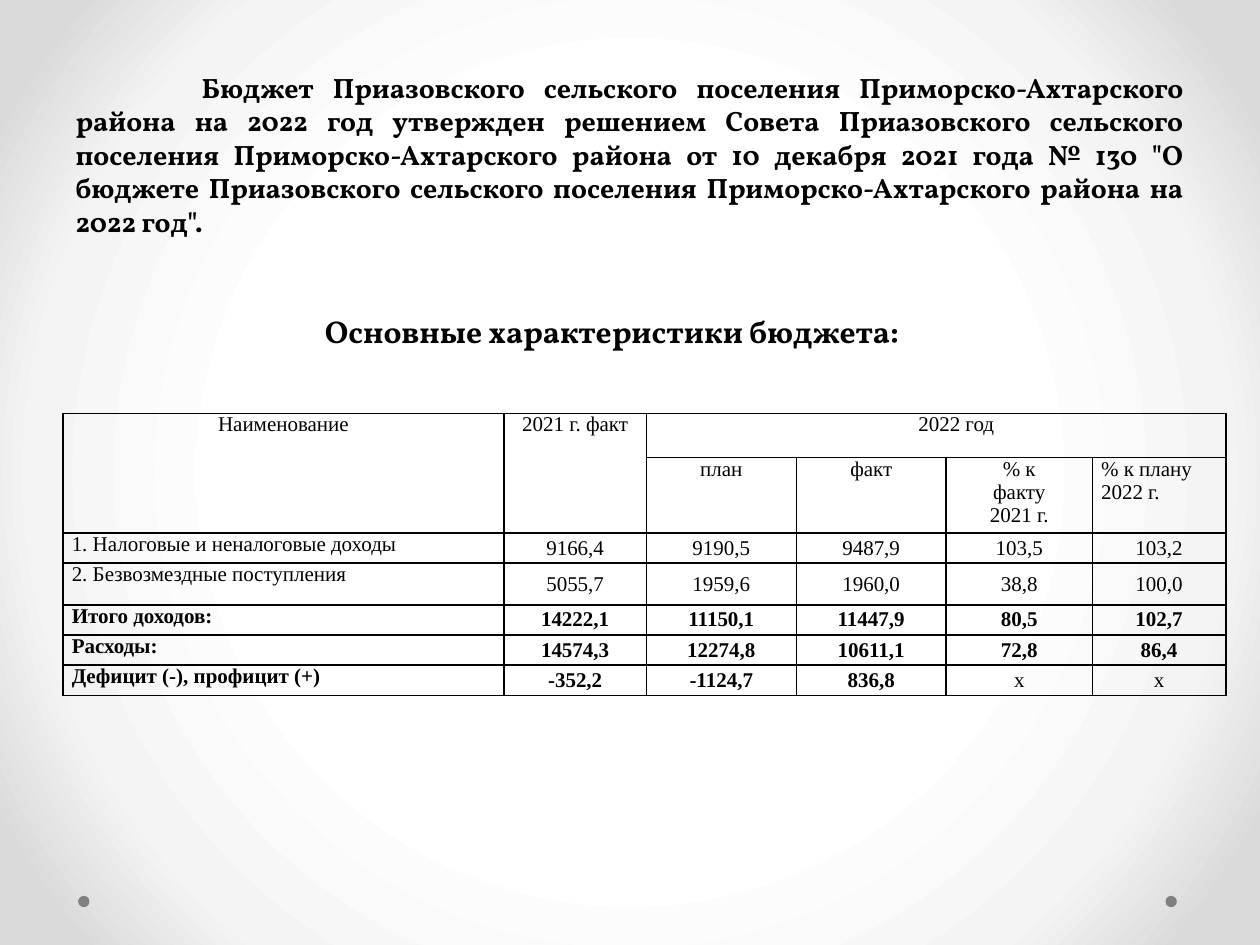
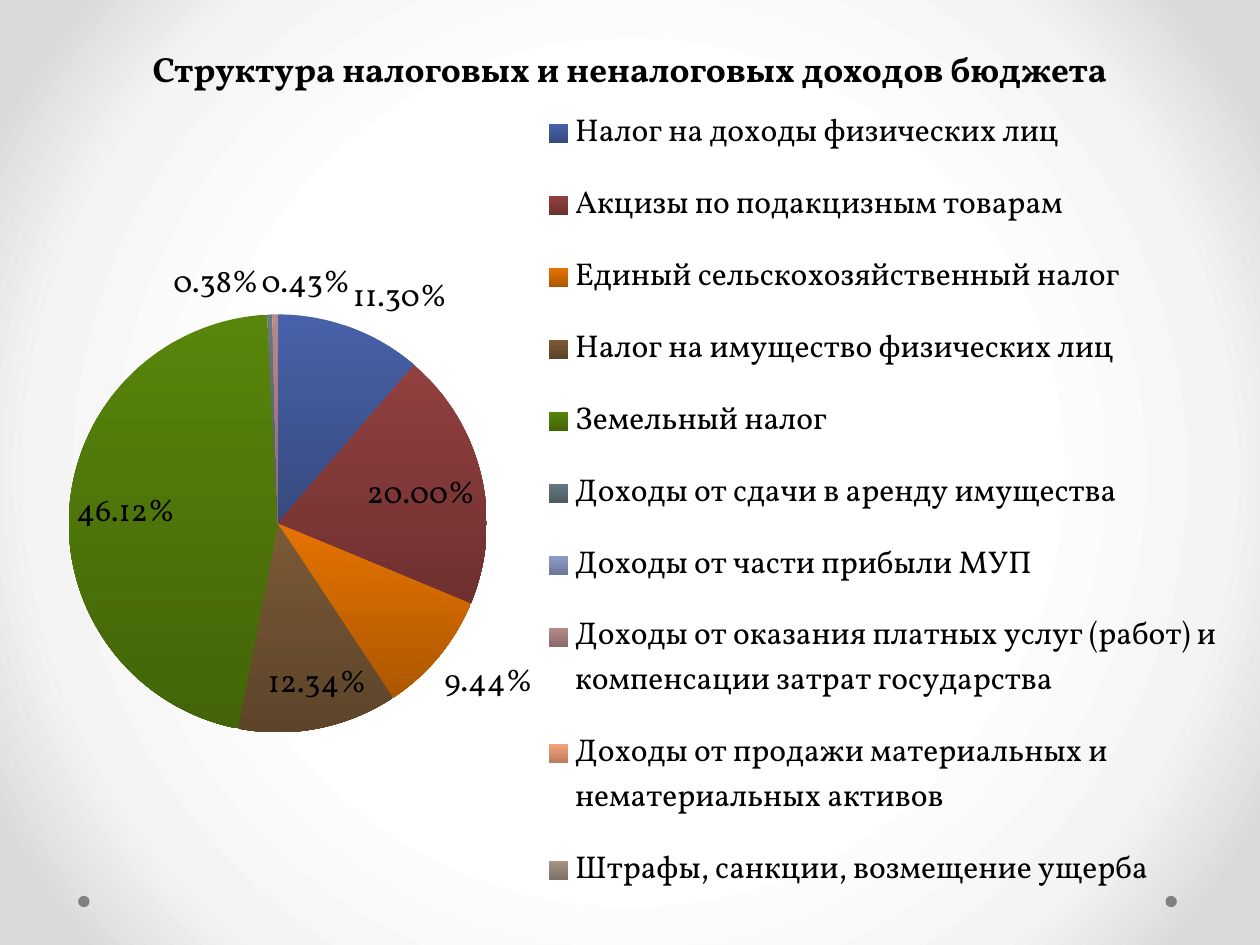
"""Build two slides on a rural settlement budget: key figures and revenue structure."""
from dataclasses import dataclass
from typing import NamedTuple

from lxml import etree
from pptx import Presentation
from pptx import util as u
from pptx.chart.data import CategoryChartData
from pptx.dml.color import RGBColor
from pptx.enum import chart as charts, shapes, text
from pptx.oxml import parse_xml
from pptx.oxml.ns import nsdecls, qn

Inches = u.Inches
Align = text.PP_ALIGN
Anchor = text.MSO_ANCHOR


@dataclass(frozen=True)
class Theme:
    ink: str = "000000"
    dot: str = "808080"
    glow: tuple = ((50, "FFFFFF"), (76, "F4F4F4"), (92, "DADADA"))
    display: str = "Vollkorn"
    serif: str = "Times New Roman"
    intro: int = 16
    title: int = 20
    heading: int = 18
    cell: int = 12
    border: float = 1
    slice_shade: float = 0.76


class Box(NamedTuple):
    left: float
    top: float
    width: float
    height: float

    def lengths(self) -> list:
        return [Inches(side) for side in self]


@dataclass(frozen=True)
class Income:
    name: str
    share: float
    color: str


@dataclass(frozen=True)
class BudgetRow:
    name: str
    figures: tuple
    bold: bool = False


THEME = Theme()
DOTS = [Box(left, 7.11, 0.09, 0.09) for left in (0.62, 9.25)]

COLUMNS = (3.5, 1.13, 1.19, 1.19, 1.16, 1.06)
ROWS = (0.35, 0.6, 0.24, 0.33, 0.24, 0.24, 0.24)
SUBHEADS = ("план", "факт", "% к\nфакту\n2021 г.", "% к плану\n2022 г.")
BUDGET = [
    BudgetRow("1. Налоговые и неналоговые доходы", ("9166,4", "9190,5", "9487,9", "103,5", "103,2")),
    BudgetRow("2. Безвозмездные поступления", ("5055,7", "1959,6", "1960,0", "38,8", "100,0")),
    BudgetRow("Итого доходов:", ("14222,1", "11150,1", "11447,9", "80,5", "102,7"), True),
    BudgetRow("Расходы:", ("14574,3", "12274,8", "10611,1", "72,8", "86,4"), True),
    BudgetRow("Дефицит (-), профицит (+)", ("-352,2", "-1124,7", "836,8", "х", "х"), True),
]
PERCENT = "0.00%"
INCOMES = [
    Income("Налог на доходы физических лиц", 11.3, "4861A9"),
    Income("Акцизы по подакцизным товарам", 20, "923F3F"),
    Income("Единый сельскохозяйственный налог", 9.44, "E57300"),
    Income("Налог на имущество физических лиц", 12.34, "7B5936"),
    Income("Земельный налог", 46.12, "58850B"),
    Income("Доходы от сдачи в аренду имущества", 0.38, "667880"),
    Income("Доходы от части прибыли МУП", 0, "8E9CCC"),
    Income("Доходы от оказания платных услуг (работ) и компенсации затрат государства", 0.43, "B88A8A"),
    Income("Доходы от продажи материальных и нематериальных активов", 0, "F5A27A"),
    Income("Штрафы, санкции, возмещение ущерба", 0, "A59686"),
]


def rgb(color: str) -> RGBColor:
    return RGBColor.from_string(color)


def shade(color: str, factor: float) -> RGBColor:
    """Darken a colour by a factor."""
    return RGBColor(*(round(part * factor) for part in rgb(color)))


def style_font(font, name: str, size: float, bold: bool = False) -> None:
    font.name, font.size, font.bold = name, u.Pt(size), bold
    font.color.rgb = rgb(THEME.ink)


def paint_background(deck) -> None:
    """Give the slide master a circular gradient."""
    fill = deck.slide_master.background.fill
    fill.gradient()
    gradient = deck.slide_master.element.find(".//" + qn("a:gradFill"))
    stops = "".join(f'<a:gs pos="{pos * 1000}"><a:srgbClr val="{color}"/></a:gs>'
                    for pos, color in THEME.glow)
    gradient.getparent().replace(gradient, parse_xml(
        f'<a:gradFill {nsdecls("a")} rotWithShape="1"><a:gsLst>{stops}</a:gsLst>'
        '<a:path path="circle"><a:fillToRect l="50000" t="50000" r="50000" b="50000"/></a:path>'
        '</a:gradFill>'))


def add_page(deck, title: str, box: Box, size: int, align, spacing, indent: float = 0):
    """Add a slide with its title and the two footer dots."""
    page = deck.slides.add_slide(deck.slide_layouts[5])
    for place in DOTS:
        dot = page.shapes.add_shape(shapes.MSO_SHAPE.OVAL, *place.lengths())
        dot.shadow.inherit = False
        dot.fill.solid()
        dot.fill.fore_color.rgb = rgb(THEME.dot)
        dot.line.fill.background()
    holder = page.shapes.title
    holder.left, holder.top, holder.width, holder.height = box.lengths()
    frame = holder.text_frame
    frame.auto_size = text.MSO_AUTO_SIZE.NONE
    frame.vertical_anchor = Anchor.BOTTOM
    para = frame.paragraphs[0]
    para.text = title
    para.alignment, para.line_spacing = align, spacing
    para._p.get_or_add_pPr().set("indent", str(Inches(indent)))
    style_font(para.font, THEME.display, size, True)
    return page


def fill_cell(cell, words: str, align=Align.CENTER, anchor=Anchor.TOP, bold: bool = False) -> None:
    cell.text = words
    cell.vertical_anchor = anchor
    for para in cell.text_frame.paragraphs:
        para.alignment = align
        style_font(para.font, THEME.serif, THEME.cell, bold)


def frame_cell(cell) -> None:
    """Clear the fill and margins of a cell and draw its four borders."""
    cell.fill.background()
    cell.margin_left = cell.margin_right = Inches(0.07)
    cell.margin_top = cell.margin_bottom = 0
    properties = cell._tc.get_or_add_tcPr()
    for index, side in enumerate(("lnL", "lnR", "lnT", "lnB")):
        properties.insert(index, parse_xml(
            f'<a:{side} {nsdecls("a")} w="{u.Pt(THEME.border)}"><a:solidFill>'
            f'<a:srgbClr val="{THEME.ink}"/></a:solidFill></a:{side}>'))


def add_budget_table(page) -> None:
    table = page.shapes.add_table(len(ROWS), len(COLUMNS), *Box(0.5, 3.28, 9.22, 2.25).lengths()).table
    table.first_row = table.horz_banding = False
    for column, width in zip(table.columns, COLUMNS):
        column.width = Inches(width)
    for row, height in zip(table.rows, ROWS):
        row.height = Inches(height)
    for cell in table.iter_cells():
        frame_cell(cell)
        fill_cell(cell, "")
    for column in (0, 1):
        table.cell(0, column).merge(table.cell(1, column))
    table.cell(0, 2).merge(table.cell(0, 5))
    for column, words in enumerate(("Наименование", "2021 г. факт", "2022 год")):
        fill_cell(table.cell(0, column), words)
    table.cell(0, 2).margin_left = Inches(0.39)
    for column, words in enumerate(SUBHEADS, 2):
        fill_cell(table.cell(1, column), words, Align.LEFT if column == 5 else Align.CENTER)
    for index, row in enumerate(BUDGET, 2):
        fill_cell(table.cell(index, 0), row.name, Align.LEFT, bold=row.bold)
        for column, figure in enumerate(row.figures, 1):
            fill_cell(table.cell(index, column), figure, anchor=Anchor.MIDDLE,
                      bold=row.bold and figure != "х")


def place_part(part, index: int, box: Box, inner: bool = False) -> None:
    """Set a chart part's manual layout in fractions of the chart."""
    for old in part.findall(qn("c:layout")):
        part.remove(old)
    layout = etree.Element(qn("c:layout"))
    manual = etree.SubElement(layout, qn("c:manualLayout"))
    settings = [("layoutTarget", "inner")] if inner else []
    settings += [("xMode", "edge"), ("yMode", "edge"), *zip("xywh", box)]
    for name, value in settings:
        etree.SubElement(manual, qn(f"c:{name}")).set("val", str(value))
    part.insert(index, layout)


def tune_labels(label_list) -> None:
    """Put the first label outside its slice and drop the labels of empty slices."""
    flags = "".join(f'<c:show{name} val="{int(name == "Percent")}"/>' for name in
                    ("LegendKey", "Val", "CatName", "SerName", "Percent", "BubbleSize"))
    outside = f'<c:numFmt formatCode="{PERCENT}" sourceLinked="0"/><c:dLblPos val="outEnd"/>{flags}'
    changes = [(0, outside)]
    changes += [(index, '<c:delete val="1"/>') for index, income in enumerate(INCOMES) if not income.share]
    for order, (index, change) in enumerate(changes):
        label_list.insert(order, parse_xml(
            f'<c:dLbl {nsdecls("c")}><c:idx val="{index}"/>{change}</c:dLbl>'))


def add_income_pie(page) -> None:
    data = CategoryChartData()
    data.categories = [income.name for income in INCOMES]
    data.add_series("Series 1", [income.share for income in INCOMES])
    chart = page.shapes.add_chart(charts.XL_CHART_TYPE.PIE, *Box(0, 0.6, 9.8, 6.77).lengths(), data).chart
    chart.has_title = False
    style_font(chart.font, THEME.display, THEME.heading)
    chart.has_legend = True
    chart.legend.position = charts.XL_LEGEND_POSITION.RIGHT
    chart.legend.include_in_layout = False
    chart.plots[0].vary_by_categories = True
    series = chart.plots[0].series[0]
    for index, income in enumerate(INCOMES):
        fill = series.points[index].format.fill
        fill.gradient()
        fill.gradient_angle = 270
        first, last = fill.gradient_stops
        first.color.rgb = rgb(income.color)
        last.color.rgb = shade(income.color, THEME.slice_shade)
    labels = series.data_labels
    labels.show_percentage, labels.show_value = True, False
    labels.number_format, labels.number_format_is_linked = PERCENT, False
    labels.position = charts.XL_LABEL_POSITION.BEST_FIT
    tune_labels(chart.element.find(".//" + qn("c:dLbls")))
    place_part(chart.element.find(".//" + qn("c:plotArea")), 0, Box(0, 0.28, 0.45, 0.49), True)
    place_part(chart.element.find(".//" + qn("c:legend")), 1, Box(0.43, 0.01, 0.57, 0.98))


def main() -> None:
    deck = Presentation()
    deck.slide_width, deck.slide_height = Inches(10), Inches(7.5)
    paint_background(deck)

    intro = ("Бюджет Приазовского сельского поселения Приморско-Ахтарского района на 2022 год "
             "утвержден решением Совета Приазовского сельского поселения Приморско-Ахтарского "
             "района от 10 декабря 2021 года № 130 \"О бюджете Приазовского сельского поселения "
             "Приморско-Ахтарского района на 2022 год\".")
    page = add_page(deck, intro, Box(0.5, 0, 9, 1.94), THEME.intro, Align.JUSTIFY, 1.0, indent=1)
    heading = page.shapes.add_textbox(*Box(2.48, 2.43, 4.89, 0.4).lengths()).text_frame
    heading.word_wrap = True
    para = heading.paragraphs[0]
    para.text = "Основные характеристики бюджета:"
    style_font(para.font, THEME.display, THEME.heading, True)
    add_budget_table(page)

    page = add_page(deck, "Структура налоговых и неналоговых доходов бюджета",
                    Box(0.5, 0, 9, 0.76), THEME.title, Align.CENTER, u.Pt(58))
    add_income_pie(page)
    deck.save("out.pptx")


if __name__ == "__main__":
    main()
